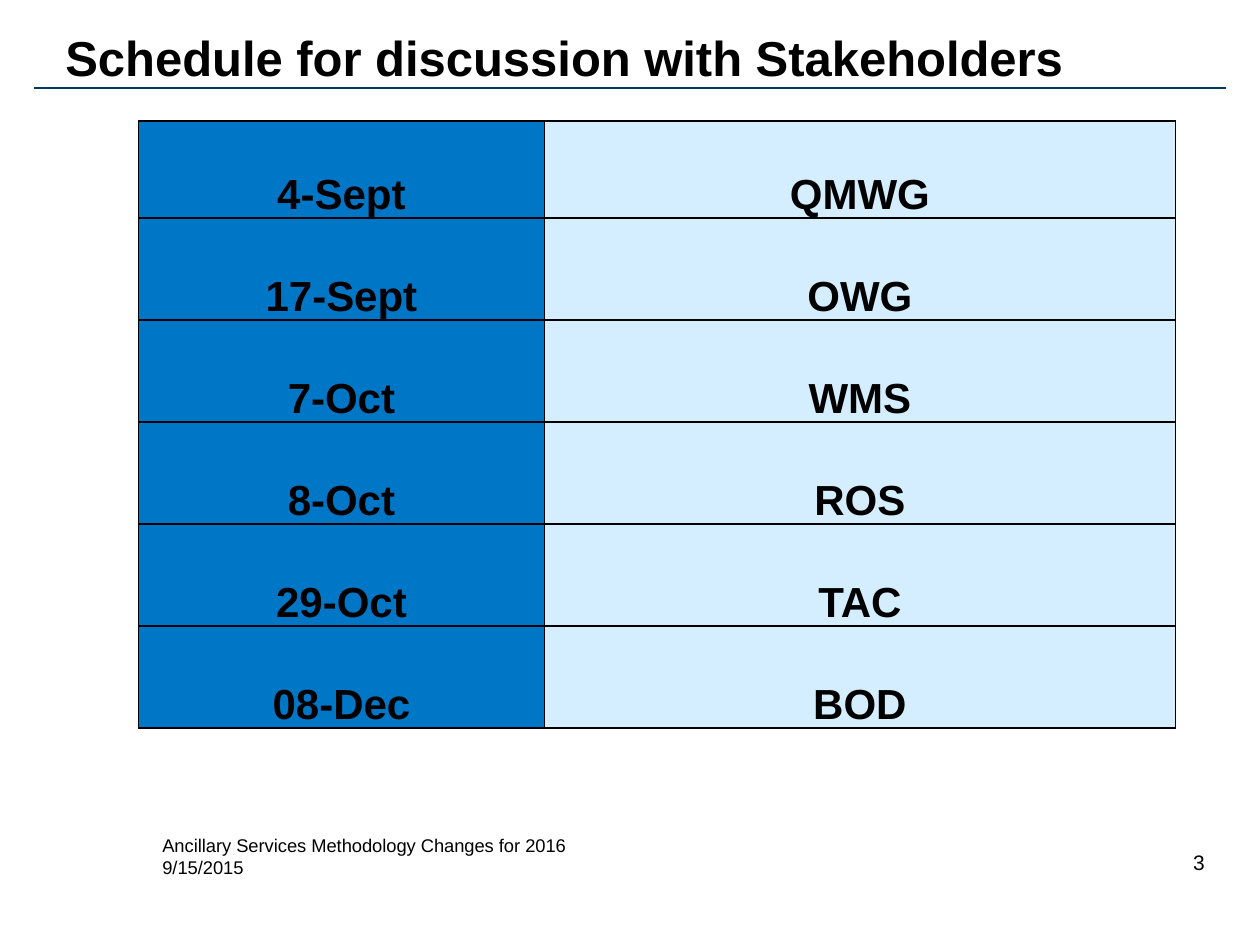
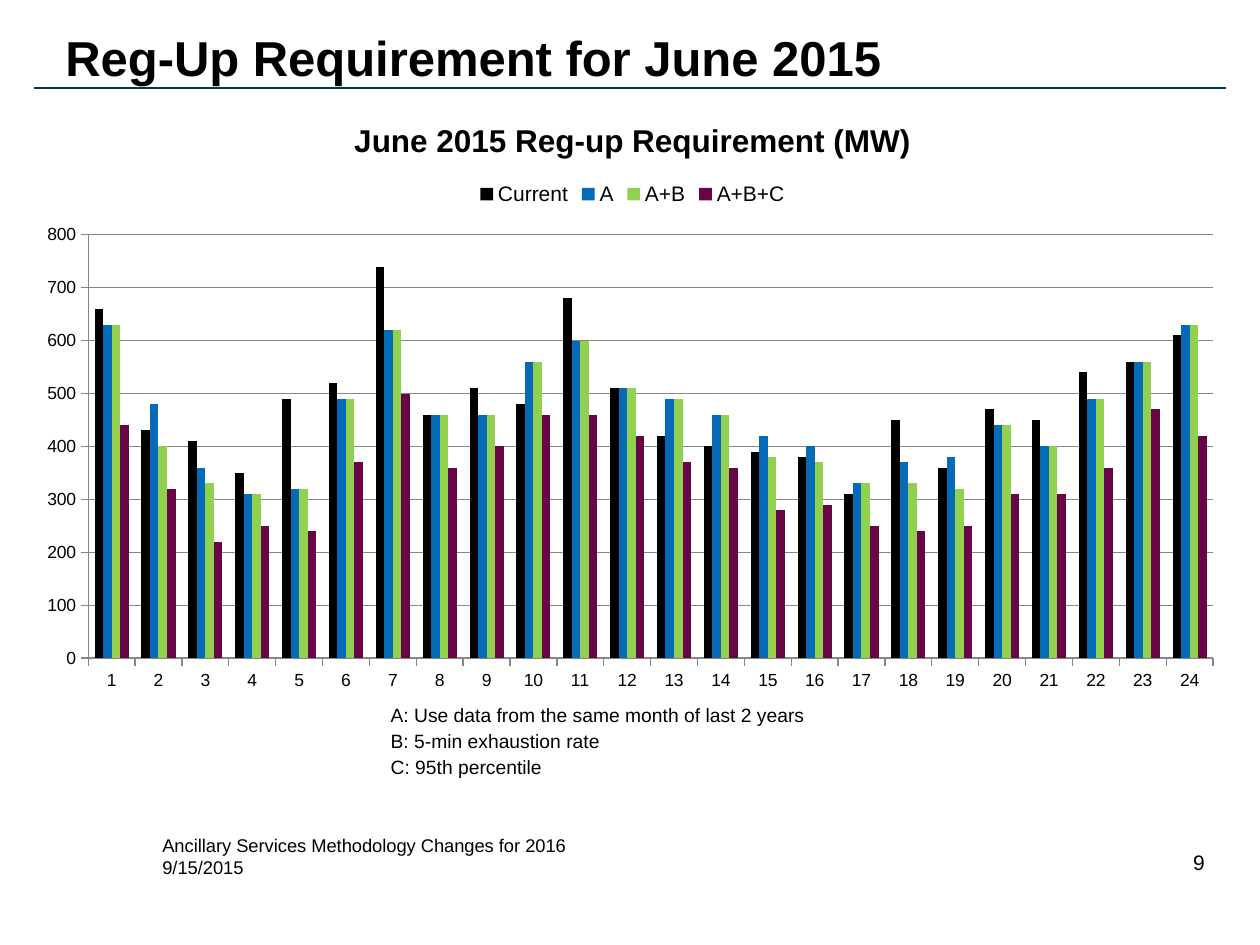
from typing import NamedTuple

from lxml import etree
from pptx import Presentation
from pptx.chart.data import CategoryChartData
from pptx.dml.color import RGBColor as RGB
from pptx.enum.chart import XL_CHART_TYPE as CHART, XL_LEGEND_POSITION as LEGEND
from pptx.enum.chart import XL_TICK_MARK as TICK
from pptx.enum.shapes import MSO_CONNECTOR as LINE
from pptx.enum.text import MSO_ANCHOR as ANCHOR, PP_ALIGN as ALIGN
from pptx.oxml import parse_xml
from pptx.oxml.ns import nsdecls, qn
from pptx.util import Inches, Pt


class Theme:
    font = "Arial"
    ink, white, rule, grid = "000000", "FFFFFF", "00385E", "868686"
    date_fill, group_fill = "0076C6", "D5EEFF"
    series = ["000000", "056BB8", "92D050", "680546"]
    title, cell, chart_title = 28, 24, 18
    number, legend, note, footer, axis = 12, 12, 11, 10.5, 10


class Box(NamedTuple):
    """A region measured in grid columns and rows of a tenth of an inch."""
    x: float
    y: float
    w: float
    h: float

    def inner(self, x, y, w, h):
        return Box(self.x + x, self.y + y, w, h)

    def emu(self):
        return [Inches(v / 10) for v in self]


PAGE = Box(0, 0, 100, 75)

MEETINGS = [("4-Sept", "QMWG"), ("17-Sept", "OWG"), ("7-Oct", "WMS"),
            ("8-Oct", "ROS"), ("29-Oct", "TAC"), ("08-Dec", "BOD")]

REG_UP = {
    "Current": [660, 430, 410, 350, 490, 520, 740, 460, 510, 480, 680, 510,
                420, 400, 390, 380, 310, 450, 360, 470, 450, 540, 560, 610],
    "A": [630, 480, 360, 310, 320, 490, 620, 460, 460, 560, 600, 510,
          490, 460, 420, 400, 330, 370, 380, 440, 400, 490, 560, 630],
    "A+B": [630, 400, 330, 310, 320, 490, 620, 460, 460, 560, 600, 510,
            490, 460, 380, 370, 330, 330, 320, 440, 400, 490, 560, 630],
    "A+B+C": [440, 320, 220, 250, 240, 370, 500, 360, 400, 460, 460, 420,
              370, 360, 280, 290, 250, 240, 250, 310, 310, 360, 470, 420],
}

NOTES = ["A: Use data from the same month of last 2 years",
         "B: 5-min exhaustion rate", "C: 95th percentile"]


def style_font(font, size, bold=False):
    font.name, font.size, font.bold = Theme.font, Pt(size), bold
    font.color.rgb = RGB.from_string(Theme.ink)


def write(tf, text, size, bold=False, align=ALIGN.LEFT):
    """Fill a text frame, one paragraph for each line of text."""
    tf.word_wrap = True
    for i, line in enumerate(text.split("\n")):
        p = tf.add_paragraph() if i else tf.paragraphs[0]
        p.alignment = align
        r = p.add_run()
        r.text = line
        style_font(r.font, size, bold)


def add_text(slide, box, text, size, anchor=ANCHOR.MIDDLE, **fmt):
    tf = slide.shapes.add_textbox(*box.emu()).text_frame
    tf.vertical_anchor = anchor
    write(tf, text, size, **fmt)


def add_frame(slide, box, title, number):
    """Title, rule, footer and slide number."""
    add_text(slide, box.inner(11.9, 65.7, 75.1, 4.5),
             "Ancillary Services Methodology Changes for 2016\n9/15/2015",
             Theme.footer, anchor=ANCHOR.TOP)
    x, y, w, _ = box.inner(2.7, 7, 94.6, 0).emu()
    rule = slide.shapes.add_connector(LINE.STRAIGHT, x, y, x + w, y)
    rule.line.color.rgb = RGB.from_string(Theme.rule)
    rule.line.width = Pt(1.25)
    etree.SubElement(rule._element.spPr, qn("a:effectLst"))
    add_text(slide, box.inner(73.3, 66.4, 23.3, 4), str(number), Theme.number,
             align=ALIGN.RIGHT)
    add_text(slide, box.inner(4.2, 2, 92.5, 5), title, Theme.title, bold=True)


def set_borders(cell, color):
    tc_pr = cell._tc.get_or_add_tcPr()
    for i, side in enumerate("LRTB"):
        tc_pr.insert(i, parse_xml(
            f'<a:ln{side} {nsdecls("a")} w="12700"><a:solidFill>'
            f'<a:srgbClr val="{color}"/></a:solidFill></a:ln{side}>'))


def add_grid(slide, box, rows, widths, heights, size, border, fills, insets, **fmt):
    """A plain table; fills holds one colour, or None, for each column."""
    table = slide.shapes.add_table(len(rows), len(widths), *box.emu()).table
    table.first_row = table.horz_banding = False
    for col, width in zip(table.columns, widths):
        col.width = Inches(width / 10)
    for r, (texts, height) in enumerate(zip(rows, heights)):
        table.rows[r].height = Inches(height / 10)
        for c, (text, fill) in enumerate(zip(texts, fills)):
            cell = table.cell(r, c)
            cell.vertical_anchor = ANCHOR.BOTTOM
            (cell.margin_left, cell.margin_top,
             cell.margin_right, cell.margin_bottom) = map(Inches, insets)
            if fill:
                cell.fill.solid()
                cell.fill.fore_color.rgb = RGB.from_string(fill)
            else:
                cell.fill.background()
            set_borders(cell, border)
            write(cell.text_frame, text, size, **fmt)


def add_schedule(slide, box):
    """Meeting dates beside the groups that meet."""
    first, rest = 7.7, 8.1
    dates = 32.2
    add_grid(slide, box, MEETINGS, [dates, box.w - dates],
             [first] + [rest] * (len(MEETINGS) - 1), Theme.cell, Theme.ink,
             [Theme.date_fill, Theme.group_fill], (0.07, 0, 0.07, 0),
             bold=True, align=ALIGN.CENTER)


def set_plot_area(chart, **shares):
    """Fix the inner plot area as shares of the chart's size."""
    plot_area = chart._chartSpace.chart.plotArea
    for old in plot_area.findall(qn("c:layout")):
        plot_area.remove(old)
    values = "".join(f'<c:{k} val="{v}"/>' for k, v in shares.items())
    plot_area.insert(0, parse_xml(
        f'<c:layout {nsdecls("c")}><c:manualLayout><c:layoutTarget val="inner"/>'
        f'<c:xMode val="edge"/><c:yMode val="edge"/>{values}'
        '</c:manualLayout></c:layout>'))


def add_reg_up_chart(slide, box):
    """Hourly requirement, one column for each method."""
    data = CategoryChartData()
    data.categories = [str(hour) for hour in range(1, 25)]
    for name, values in REG_UP.items():
        data.add_series(name, values)
    chart = slide.shapes.add_chart(CHART.COLUMN_CLUSTERED, *box.emu(), data).chart
    style_font(chart.font, Theme.axis)

    # Title and legend
    chart.has_title = True
    write(chart.chart_title.text_frame, "June 2015 Reg-up Requirement (MW)",
          Theme.chart_title, bold=True, align=ALIGN.CENTER)
    chart.has_legend = True
    chart.legend.position = LEGEND.TOP
    chart.legend.include_in_layout = False
    style_font(chart.legend.font, Theme.legend)

    # Columns
    plot = chart.plots[0]
    plot.gap_width, plot.overlap, plot.vary_by_categories = 150, 0, False
    for series, color in zip(plot.series, Theme.series):
        series.format.fill.solid()
        series.format.fill.fore_color.rgb = RGB.from_string(color)

    # Axes
    grid = RGB.from_string(Theme.grid)
    values = chart.value_axis
    values.minimum_scale, values.maximum_scale, values.major_unit = 0, 800, 100
    values.has_major_gridlines = True
    values.major_gridlines.format.line.color.rgb = grid
    for axis in (chart.category_axis, values):
        axis.major_tick_mark = TICK.OUTSIDE
        axis.format.line.color.rgb = grid
        style_font(axis.tick_labels.font, Theme.axis)
    set_plot_area(chart, x=0.05, y=0.23, w=0.93, h=0.7)


def add_notes_table(slide, box):
    """Key to the methods."""
    n = len(NOTES)
    add_grid(slide, box, [[note] for note in NOTES], [box.w], [box.h / n] * n,
             Theme.note, Theme.white, [None], (0.01, 0.01, 0.01, 0))


def schedule_slide(slide, box):
    add_frame(slide, box, "Schedule for discussion with Stakeholders", 3)
    add_schedule(slide, box.inner(11, 9.6, 82.3, 48.2))


def reg_up_slide(slide, box):
    add_frame(slide, box, "Reg-Up Requirement for June 2015", 9)
    add_reg_up_chart(slide, box.inner(2.2, 7.6, 96, 48))
    add_notes_table(slide, box.inner(30.9, 55.6, 38.2, 6.2))


def main():
    prs = Presentation()
    _, _, prs.slide_width, prs.slide_height = PAGE.emu()
    for build in (schedule_slide, reg_up_slide):
        build(prs.slides.add_slide(prs.slide_layouts[6]), PAGE)
    prs.save("out.pptx")


if __name__ == "__main__":
    main()
